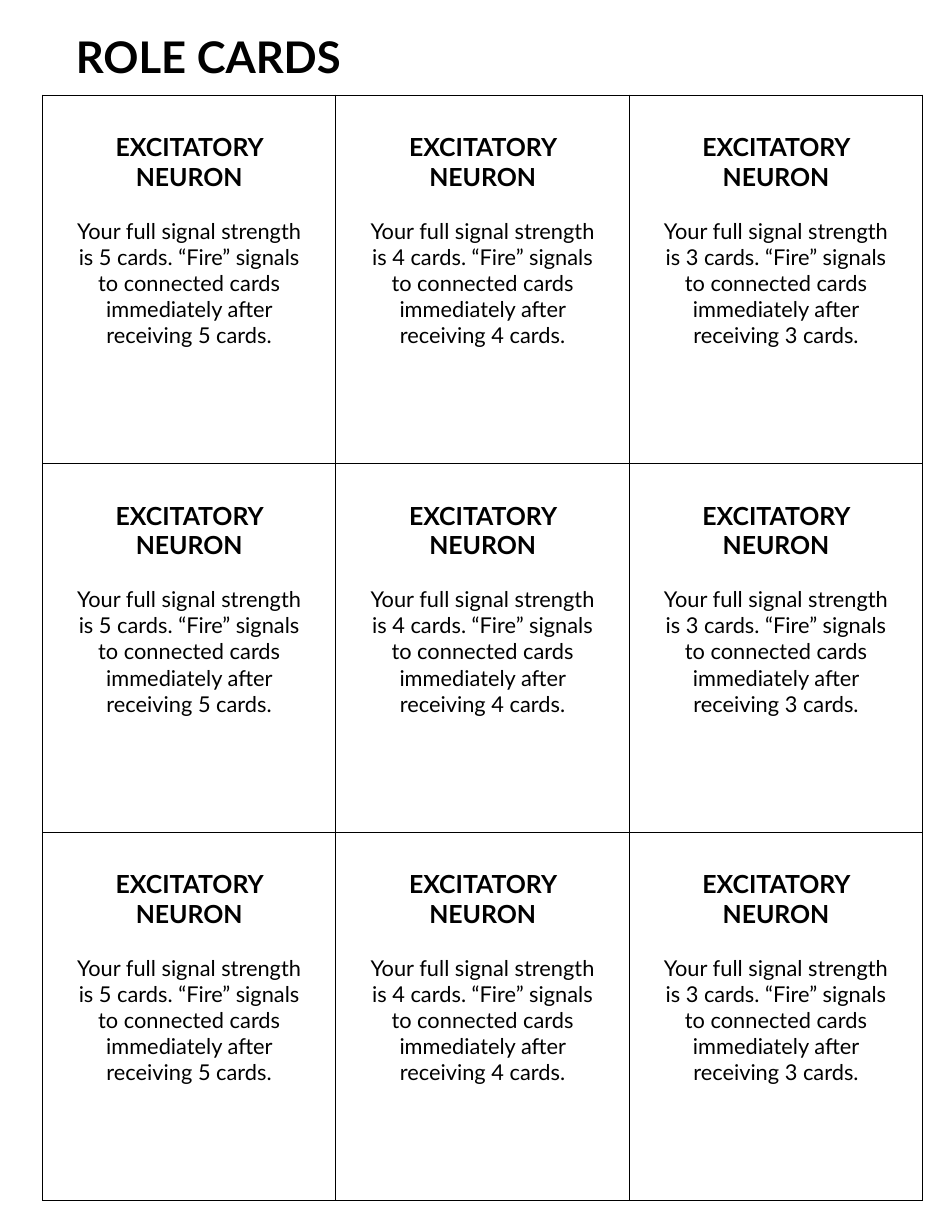
"""Build a page of role cards laid out as a three by three table."""
from dataclasses import dataclass

from lxml import etree
from pptx import Presentation, util as u
from pptx.dml.color import RGBColor
from pptx.enum import text
from pptx.oxml import ns

FONT = "Lato"
INK = "000000"
ROWS = 3
STRENGTHS = (5, 4, 3)
CARD_WIDTH = 2.62
CARD_HEIGHT = 3.29
BORDER_WIDTH = 0.75
CARD_MARGINS = {
    "margin_left": u.Inches(0.3),
    "margin_right": u.Inches(0.3),
    "margin_top": u.Inches(0.33),
    "margin_bottom": u.Inches(0.1),
}
TITLE_FORMAT = {"size": u.Pt(28), "bold": True}
ROLE_FORMAT = {"size": u.Pt(16), "bold": True}
BODY_FORMAT = {"size": u.Pt(14), "bold": False}


@dataclass(frozen=True)
class RoleCard:
    role: str
    strength: int

    @property
    def instructions(self) -> str:
        return (
            f"Your full signal strength is {self.strength} cards. “Fire” signals "
            f"to connected cards immediately after receiving {self.strength} cards."
        )


def apply_values(target, values: dict) -> None:
    for name, value in values.items():
        setattr(target, name, value)


def color(value: str) -> RGBColor:
    return RGBColor.from_string(value)


def write(para, wording: str, font_format: dict) -> None:
    span = para.add_run()
    span.text = wording
    apply_values(span.font, {"name": FONT, **font_format})
    span.font.color.rgb = color(INK)


def add_title(page, wording: str) -> None:
    box = page.shapes.add_textbox(
        u.Inches(0.58), u.Inches(0.17), u.Inches(7.67), u.Inches(0.68)
    )
    frame = box.text_frame
    margins = ("margin_left", "margin_right", "margin_top", "margin_bottom")
    apply_values(frame, {"word_wrap": True, **dict.fromkeys(margins, u.Inches(0.1))})
    write(frame.paragraphs[0], wording, TITLE_FORMAT)


def outline(cell) -> None:
    properties = cell._tc.get_or_add_tcPr()
    for position, side in enumerate(("lnL", "lnR", "lnT", "lnB")):
        line = etree.Element(ns.qn(f"a:{side}"), w=str(u.Pt(BORDER_WIDTH)))
        fill = etree.SubElement(line, ns.qn("a:solidFill"))
        etree.SubElement(fill, ns.qn("a:srgbClr"), val=INK)
        properties.insert(position, line)


def fill_card(cell, card: RoleCard) -> None:
    apply_values(cell, CARD_MARGINS)
    cell.fill.background()
    outline(cell)
    heading = cell.text_frame.paragraphs[0]
    write(heading, card.role, ROLE_FORMAT)
    body = cell.text_frame.add_paragraph()
    body.space_before = u.Pt(16.8)
    write(body, card.instructions, BODY_FORMAT)
    for para in (heading, body):
        para.alignment = text.PP_ALIGN.CENTER


def add_cards(page) -> None:
    columns = len(STRENGTHS)
    table = page.shapes.add_table(
        ROWS, columns, u.Inches(0.38), u.Inches(0.85),
        u.Inches(columns * CARD_WIDTH), u.Inches(ROWS * CARD_HEIGHT),
    ).table
    apply_values(table, {"first_row": False, "horz_banding": False})
    for row in range(ROWS):
        for column, strength in enumerate(STRENGTHS):
            fill_card(table.cell(row, column), RoleCard("EXCITATORY NEURON", strength))


def main() -> None:
    deck = Presentation()
    apply_values(deck, {"slide_width": u.Inches(8.5), "slide_height": u.Inches(11)})
    page = deck.slides.add_slide(deck.slide_layouts[6])
    add_title(page, "ROLE CARDS")
    add_cards(page)
    deck.save("out.pptx")


if __name__ == "__main__":
    main()
